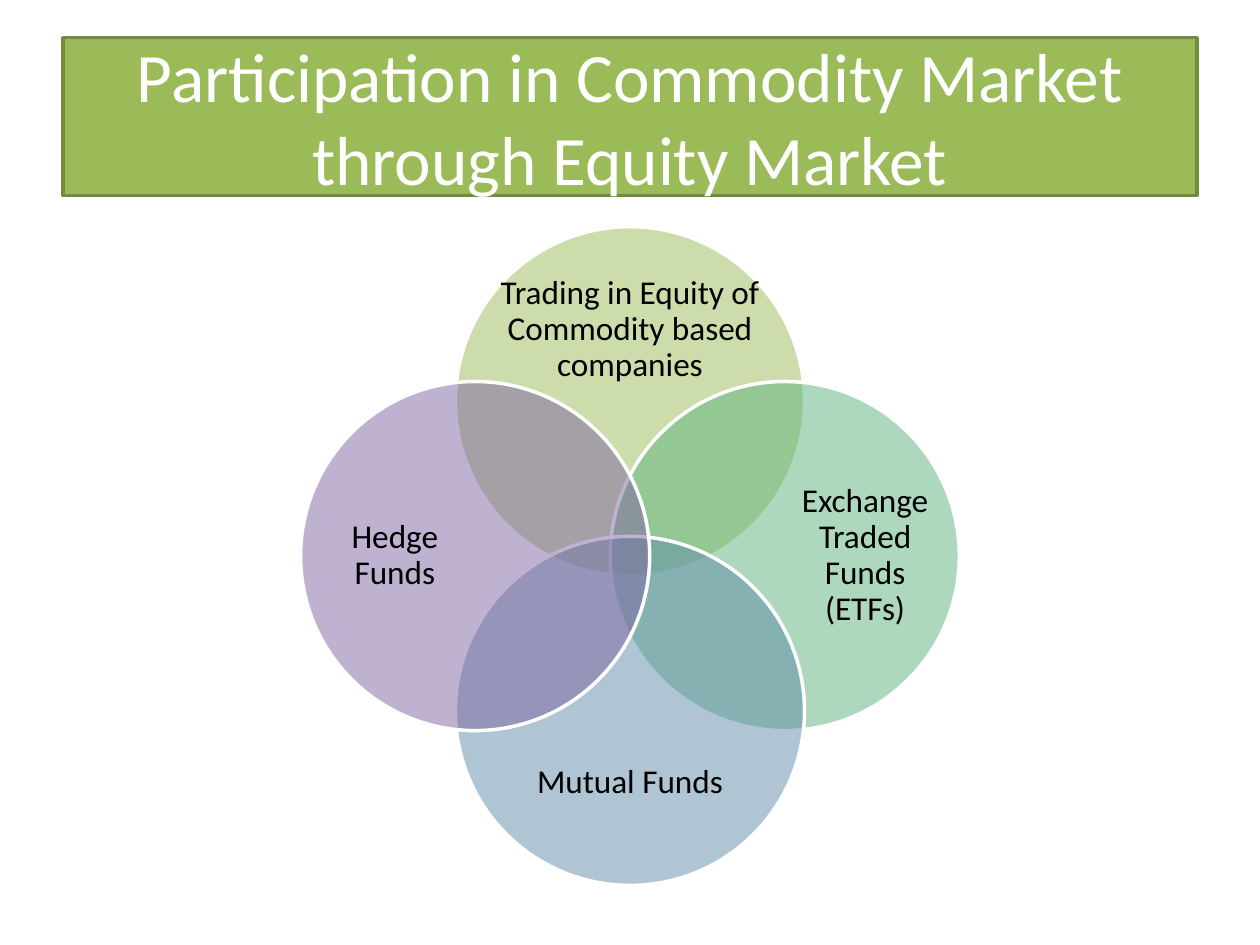
import pptx
import pptx.dml.color
import pptx.enum.shapes
import pptx.enum.text
import pptx.util
import lxml.etree

Cm = pptx.util.Cm
SHAPE = pptx.enum.shapes.MSO_SHAPE


def color(hex_string):
    """Return the colour for a hex string."""
    return pptx.dml.color.RGBColor.from_string(hex_string)


def write_text(shape, text, size, font_color, inset=0, line_spacing=None):
    """Write centred text into a shape."""
    frame = shape.text_frame
    frame.word_wrap = True
    frame.vertical_anchor = pptx.enum.text.MSO_ANCHOR.MIDDLE
    frame.margin_left = frame.margin_right = Cm(inset)
    frame.margin_top = frame.margin_bottom = Cm(inset / 2)
    paragraph = frame.paragraphs[0]
    paragraph.text = text
    paragraph.alignment = pptx.enum.text.PP_ALIGN.CENTER
    paragraph.line_spacing = line_spacing
    paragraph.font.name = "Calibri"
    paragraph.font.size = pptx.util.Pt(size)
    paragraph.font.color.rgb = color(font_color)


def add_filled_shape(shapes, kind, box, fill, line, opacity=100):
    """Add a preset shape with a fill, a 2 pt line and an opacity in percent."""
    shape = shapes.add_shape(kind, *map(Cm, box))
    shape.shadow.inherit = False
    shape.fill.solid()
    shape.fill.fore_color.rgb = color(fill)
    shape.line.color.rgb = color(line)
    shape.line.width = pptx.util.Pt(2)
    if opacity < 100:
        fill_color = shape.fill._xPr.find(".//" + pptx.oxml.ns.qn("a:srgbClr"))
        alpha = lxml.etree.SubElement(fill_color, pptx.oxml.ns.qn("a:alpha"))
        alpha.set("val", str(opacity * 1000))
    return shape


def centered_box(center_x, center_y, width, height):
    """Return the box of a given size around a centre."""
    return center_x - width / 2, center_y - height / 2, width, height


def add_title(slide, box):
    """Add the title banner."""
    banner = add_filled_shape(slide.shapes, SHAPE.RECTANGLE, box, "9BBB59", "738A42")
    write_text(banner, "Participation in Commodity Market through Equity Market",
               size=39.6, font_color="FFFFFF", inset=0.25)


def add_venn(slide, box):
    """Add four overlapping circles with labels, clockwise from the top."""
    left, top, width, height = box
    center_x, center_y = left + width / 2, top + height / 2
    diameter = 0.53 * width
    circle_offset = (width - diameter) / 2
    circles = [
        ("Trading in Equity of Commodity based companies", "9BBB59", 0, -1),
        ("Exchange Traded Funds (ETFs)", "5CB37C", 1, 0),
        ("Mutual Funds", "608CAB", 0, 1),
        ("Hedge Funds", "8064A2", -1, 0),
    ]
    group = slide.shapes.add_group_shape()
    for text, fill, step_x, step_y in circles:
        circle_box = centered_box(center_x + step_x * circle_offset,
                                  center_y + step_y * circle_offset,
                                  diameter, diameter)
        add_filled_shape(group.shapes, SHAPE.OVAL, circle_box, fill, "FFFFFF", opacity=50)
        label_size = (2.72, 5.41) if step_x else (5.41, 2.24)
        label_box = centered_box(center_x + step_x * 4.74, center_y + step_y * 4.57, *label_size)
        label = group.shapes.add_textbox(*map(Cm, label_box))
        write_text(label, text, size=19, font_color="000000", line_spacing=0.9)


def main():
    """Build and save the slide."""
    presentation = pptx.Presentation()
    presentation.slide_width, presentation.slide_height = Cm(25.4), Cm(19.05)
    slide = presentation.slides.add_slide(presentation.slide_layouts[6])
    add_title(slide, (1.27, 0.76, 22.86, 3.18))
    add_venn(slide, (6.06, 4.57, 13.28, 13.28))
    presentation.save("out.pptx")


if __name__ == "__main__":
    main()
